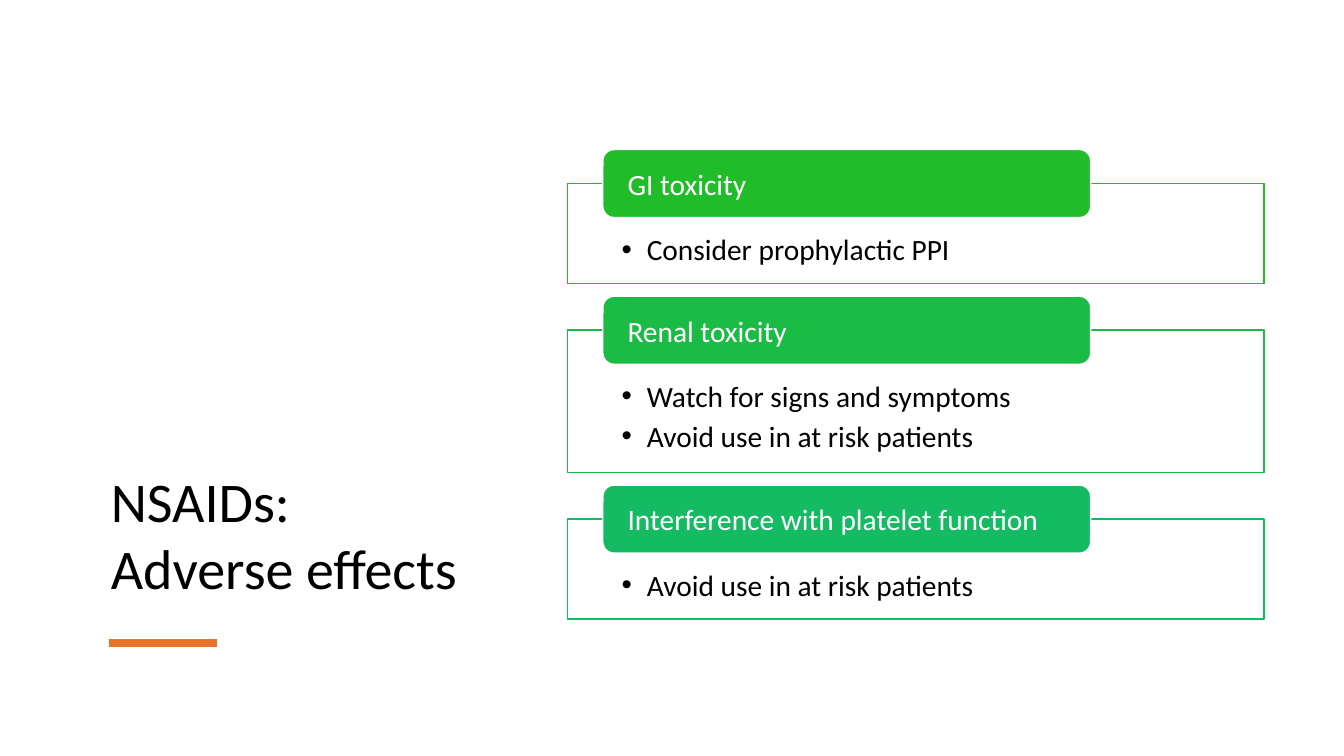
from dataclasses import dataclass

from lxml import etree
from pptx import Presentation
from pptx.dml.color import RGBColor
from pptx.enum import shapes, text
from pptx.oxml import ns
from pptx.shapes.autoshape import Shape
from pptx.slide import Slide
from pptx.util import Pt

FONT = "Calibri"
BLACK = "000000"
WHITE = "FFFFFF"
ORANGE = "E77229"

BOX_LEFT, BOX_WIDTH = 405.4, 497.5
FIRST_BOX_TOP, BOX_GAP = 131, 33.4
HEADER_LEFT, HEADER_WIDTH, HEADER_HEIGHT = 430.6, 348.5, 48.6
HEADER_RISE = 24.2
TEXT_SIZE = 21


@dataclass
class Effect:
    heading: str
    advice: list[str]
    color: str
    height: float


EFFECTS = [
    Effect("GI toxicity", ["Consider prophylactic PPI"], "21BC2A", 71.4),
    Effect(
        "Renal toxicity",
        ["Watch for signs and symptoms", "Avoid use in at risk patients"],
        "1ABC45",
        101.5,
    ),
    Effect(
        "Interference with platelet function",
        ["Avoid use in at risk patients"],
        "14BB62",
        71.4,
    ),
]


def rgb(color: str) -> RGBColor:
    return RGBColor.from_string(color)


def write_text(
    shape: Shape,
    lines: list[str],
    size: float,
    color: str,
    anchor: text.MSO_ANCHOR,
    insets: tuple[float, float, float, float],
) -> None:
    frame = shape.text_frame
    frame.text = "\n".join(lines)
    frame.word_wrap = True
    frame.auto_size = text.MSO_AUTO_SIZE.NONE
    frame.vertical_anchor = anchor
    left, top, right, bottom = insets
    frame.margin_left, frame.margin_top = Pt(left), Pt(top)
    frame.margin_right, frame.margin_bottom = Pt(right), Pt(bottom)
    for paragraph in frame.paragraphs:
        paragraph.alignment = text.PP_ALIGN.LEFT
        for run in paragraph.runs:
            run.font.name = FONT
            run.font.size = Pt(size)
            run.font.color.rgb = rgb(color)


def add_panel(
    slide: Slide,
    kind: shapes.MSO_SHAPE,
    bounds: tuple[float, float, float, float],
    fill: str,
    line: str,
) -> Shape:
    shape = slide.shapes.add_shape(kind, *(Pt(length) for length in bounds))
    shape.shadow.inherit = False
    shape.fill.solid()
    shape.fill.fore_color.rgb = rgb(fill)
    shape.line.color.rgb = rgb(line)
    shape.line.width = Pt(1)
    return shape


def add_bullets(shape: Shape) -> None:
    for paragraph in shape.text_frame.paragraphs:
        paragraph.space_after = Pt(3.15)
        properties = paragraph._p.get_or_add_pPr()
        properties.set("marL", str(Pt(18)))
        properties.set("indent", str(-Pt(18)))
        etree.SubElement(properties, ns.qn("a:buFont")).set("typeface", "Arial")
        etree.SubElement(properties, ns.qn("a:buChar")).set("char", "•")


def add_effect(slide: Slide, effect: Effect, top: float) -> None:
    box = add_panel(
        slide,
        shapes.MSO_SHAPE.RECTANGLE,
        (BOX_LEFT, top, BOX_WIDTH, effect.height),
        WHITE,
        effect.color,
    )
    fill_color = box._element.spPr.find(ns.qn("a:solidFill"))[0]
    etree.SubElement(fill_color, ns.qn("a:alpha")).set("val", "90000")
    write_text(
        box, effect.advice, TEXT_SIZE, BLACK, text.MSO_ANCHOR.TOP, (38.6, 34.3, 38.6, 11.5)
    )
    add_bullets(box)

    header = add_panel(
        slide,
        shapes.MSO_SHAPE.ROUNDED_RECTANGLE,
        (HEADER_LEFT, top - HEADER_RISE, HEADER_WIDTH, HEADER_HEIGHT),
        effect.color,
        WHITE,
    )
    write_text(
        header, [effect.heading], TEXT_SIZE, WHITE, text.MSO_ANCHOR.MIDDLE, (15.3, 0, 15.3, 0)
    )


def add_title(slide: Slide) -> None:
    title = slide.shapes.title
    title.left, title.top, title.width, title.height = Pt(72), Pt(72), Pt(279.4), Pt(360.7)
    write_text(
        title, ["NSAIDs: Adverse effects"], 40, BLACK, text.MSO_ANCHOR.BOTTOM, (7.2, 3.6, 7.2, 3.6)
    )


def add_accent(slide: Slide) -> None:
    accent = slide.shapes.add_connector(
        shapes.MSO_CONNECTOR.STRAIGHT, Pt(77.8), Pt(459.3), Pt(154.8), Pt(459.3)
    )
    accent.line.color.rgb = rgb(ORANGE)
    accent.line.width = Pt(6)
    etree.SubElement(accent._element.spPr, ns.qn("a:effectLst"))


def main() -> None:
    presentation = Presentation()
    presentation.slide_width, presentation.slide_height = Pt(960), Pt(540)
    slide = presentation.slides.add_slide(presentation.slide_layouts[5])
    add_title(slide)
    add_accent(slide)
    top = FIRST_BOX_TOP
    for effect in EFFECTS:
        add_effect(slide, effect, top)
        top += effect.height + BOX_GAP
    presentation.save("out.pptx")


if __name__ == "__main__":
    main()
